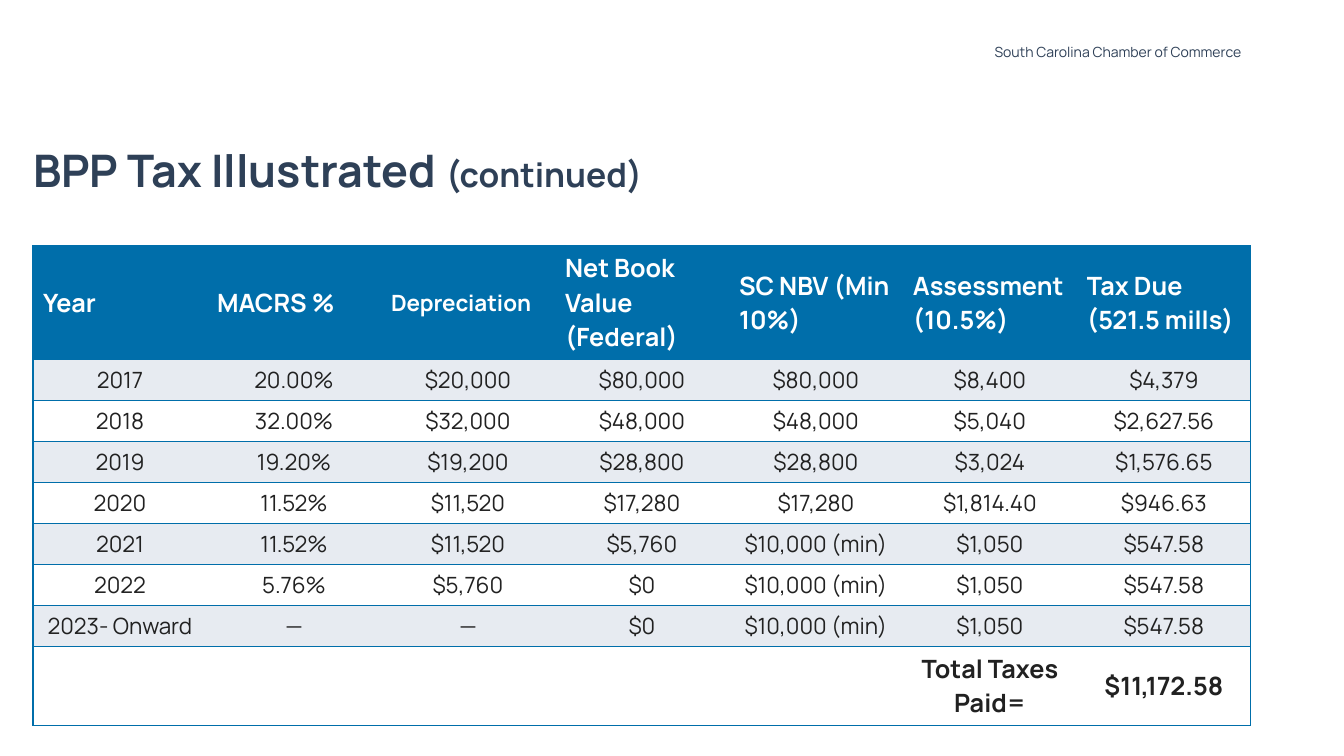
from lxml.etree import SubElement
from pptx import Presentation
from pptx.dml.color import RGBColor
from pptx.enum.text import MSO_ANCHOR, MSO_AUTO_SIZE, PP_ALIGN
from pptx.oxml.ns import qn
from pptx.util import Emu, Pt

EMU_PER_PX = 914400 / 100.8
NAVY, BLUE, INK = "2E4057", "006EAA", "212121"
WHITE, BAND = "FFFFFF", "E7EBF1"

HEADINGS = ["Year", "MACRS %", "Depreciation", "Net Book Value (Federal)",
            "SC NBV (Min 10%)", "Assessment (10.5%)", "Tax Due (521.5 mills)"]
YEARS = [
    ["2017", "20.00%", "$20,000", "$80,000", "$80,000", "$8,400", "$4,379"],
    ["2018", "32.00%", "$32,000", "$48,000", "$48,000", "$5,040", "$2,627.56"],
    ["2019", "19.20%", "$19,200", "$28,800", "$28,800", "$3,024", "$1,576.65"],
    ["2020", "11.52%", "$11,520", "$17,280", "$17,280", "$1,814.40", "$946.63"],
    ["2021", "11.52%", "$11,520", "$5,760", "$10,000 (min)", "$1,050", "$547.58"],
    ["2022", "5.76%", "$5,760", "$0", "$10,000 (min)", "$1,050", "$547.58"],
    ["2023- Onward", "—", "—", "$0", "$10,000 (min)", "$1,050", "$547.58"],
]
TOTAL = [""] * 5 + ["Total Taxes Paid=", "$11,172.58"]


def px(length):
    return Emu(round(length * EMU_PER_PX))


def rgb(value):
    return RGBColor.from_string(value)


def write(paragraph, text, size=16, color=INK, bold=False, align=PP_ALIGN.LEFT):
    paragraph.alignment = align
    run = paragraph.add_run()
    run.text = text
    run.font.name = "Manrope"
    run.font.size = Pt(size)
    run.font.bold = bold
    run.font.color.rgb = rgb(color)


class TaxSlide:
    """Builds the elements of one slide in a shared style."""

    def __init__(self, deck):
        self.slide = deck.slides.add_slide(deck.slide_layouts[5])

    def title(self, heading, suffix, left, top, width, height):
        title = self.slide.shapes.title
        title.left, title.top = px(left), px(top)
        title.width, title.height = px(width), px(height)
        frame = title.text_frame
        frame.auto_size = MSO_AUTO_SIZE.NONE
        frame.word_wrap = True
        frame.vertical_anchor = MSO_ANCHOR.MIDDLE
        frame.margin_left = frame.margin_right = 0
        line = frame.paragraphs[0]
        line.line_spacing = 0.9
        write(line, heading, size=32, color=NAVY, bold=True)
        write(line, suffix, size=24, color=NAVY, bold=True)

    def label(self, text, left, top, width, height):
        box = self.slide.shapes.add_textbox(px(left), px(top), px(width), px(height))
        frame = box.text_frame
        frame.word_wrap = True
        frame.vertical_anchor = MSO_ANCHOR.MIDDLE
        write(frame.paragraphs[0], text, size=10, color=NAVY, align=PP_ALIGN.RIGHT)

    def border(self, cell, sides):
        properties = cell._tc.get_or_add_tcPr()
        for side in "LRTB":
            edge = SubElement(properties, qn(f"a:ln{side}"), w=str(Pt(1)))
            if side in sides:
                fill = SubElement(edge, qn("a:solidFill"))
                SubElement(fill, qn("a:srgbClr"), val=BLUE)
            else:
                SubElement(edge, qn("a:noFill"))

    def cell(self, cell, text, fill, sides, **style):
        self.border(cell, sides)
        cell.fill.solid()
        cell.fill.fore_color.rgb = rgb(fill)
        cell.vertical_anchor = MSO_ANCHOR.MIDDLE
        if text:
            write(cell.text_frame.paragraphs[0], text, **style)

    def table(self, rows, left, top, column_width, row_height):
        columns = len(rows[0])
        frame = self.slide.shapes.add_table(
            len(rows), columns, px(left), px(top),
            px(column_width * columns), px(row_height * len(rows)))
        table = frame.table
        table.horz_banding = False
        for column in table.columns:
            column.width = px(column_width)
        for r, values in enumerate(rows):
            table.rows[r].height = px(row_height)
            for c, text in enumerate(values):
                sides = "TB" + "L" * (c == 0) + "R" * (c == columns - 1)
                if r == 0:
                    fill = BLUE
                    style = dict(size=16 if text == "Depreciation" else 18,
                                 color=WHITE, bold=True)
                else:
                    is_total = r == len(rows) - 1
                    fill = BAND if r % 2 else WHITE
                    style = dict(size=18 if is_total else 16, bold=is_total,
                                 align=PP_ALIGN.CENTER)
                self.cell(table.cell(r, c), text, fill, sides, **style)


def main():
    deck = Presentation()
    deck.slide_width, deck.slide_height = px(1344), px(756)
    page = TaxSlide(deck)
    page.title("BPP Tax Illustrated ", "(continued)", 33, 100, 1218, 146)
    page.table([HEADINGS, *YEARS, TOTAL], 33, 246, 174, 41)
    page.label("South Carolina Chamber of Commerce", 823, 32, 428, 40)
    deck.save("out.pptx")


if __name__ == "__main__":
    main()
